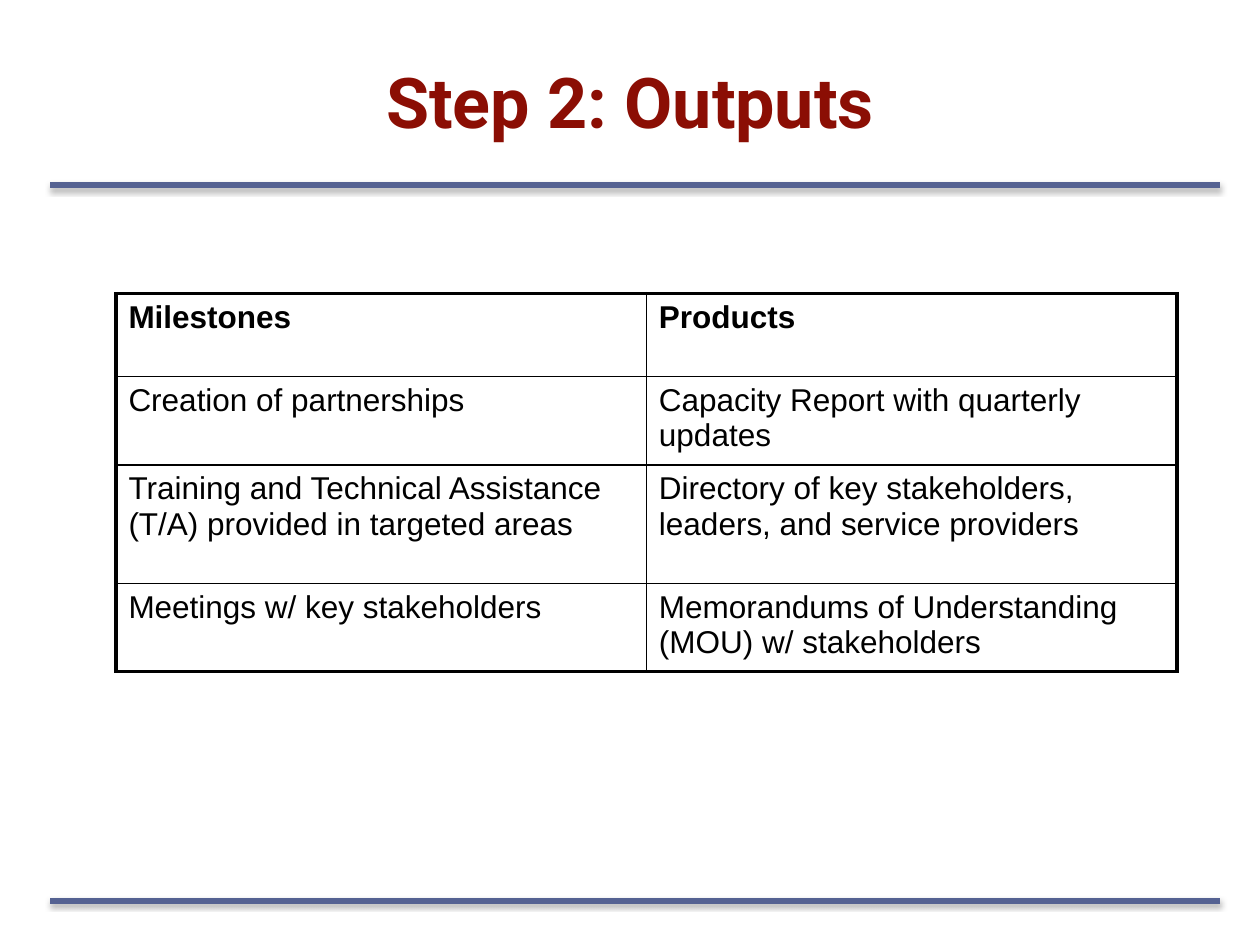
from lxml import etree
from pptx import Presentation, util as u
from pptx.dml.color import RGBColor
from pptx.enum import shapes, text
from pptx.oxml import ns

COLORS = {"title": "8B0E04", "rule": "556292", "ink": "000000", "paper": "FFFFFF"}
ROWS = [
    ("Milestones", "Products"),
    ("Creation of partnerships", "Capacity Report with quarterly updates"),
    ("Training and Technical Assistance (T/A) provided in targeted areas",
     "Directory of key stakeholders, leaders, and service providers"),
    ("Meetings w/ key stakeholders",
     "Memorandums of Understanding (MOU) w/ stakeholders"),
]
ROW_HEIGHTS = [0.66, 0.68, 0.94, 0.68]


def rgb(name):
    return RGBColor.from_string(COLORS[name])


def add_element(parent, tag, **attributes):
    values = {key: str(value) for key, value in attributes.items()}
    return etree.SubElement(parent, ns.qn(tag), values)


def write(frame, content, *, font, size, color, bold=False, align=text.PP_ALIGN.LEFT):
    paragraph = frame.paragraphs[0]
    paragraph.alignment = align
    run = paragraph.add_run()
    run.text = content
    run.font.name = font
    run.font.size = u.Pt(size)
    run.font.bold = bold
    run.font.color.rgb = rgb(color)


class SlideBuilder:
    outer_width = 2.25
    inner_width = 1

    def __init__(self, slide):
        self.slide = slide

    def title(self, content, left, top, width, height):
        box = self.slide.shapes.add_textbox(
            u.Inches(left), u.Inches(top), u.Inches(width), u.Inches(height))
        frame = box.text_frame
        frame.word_wrap = True
        frame.vertical_anchor = text.MSO_ANCHOR.MIDDLE
        write(frame, content, font="Roboto", size=40, color="title", bold=True,
              align=text.PP_ALIGN.CENTER)

    def rule(self, left, right, y):
        line = self.slide.shapes.add_connector(
            shapes.MSO_CONNECTOR.STRAIGHT,
            u.Inches(left), u.Inches(y), u.Inches(right), u.Inches(y))
        line.line.color.rgb = rgb("rule")
        line.line.width = u.Pt(3.25)
        # Soft shadow straight below the rule
        effects = add_element(line._element.spPr, "a:effectLst")
        shadow = add_element(effects, "a:outerShdw", blurRad=u.Pt(3.1),
                             dist=u.Pt(1.6), dir=90 * 60000, rotWithShape=0)
        color = add_element(shadow, "a:srgbClr", val=COLORS["ink"])
        add_element(color, "a:alpha", val=38000)

    def borders(self, cell, outer_sides):
        properties = cell._tc.get_or_add_tcPr()
        for position, side in enumerate("LRTB"):
            width = self.outer_width if side in outer_sides else self.inner_width
            line = etree.Element(ns.qn(f"a:ln{side}"), w=str(u.Pt(width)))
            fill = add_element(line, "a:solidFill")
            add_element(fill, "a:srgbClr", val=COLORS["ink"])
            properties.insert(position, line)

    def table(self, rows, heights, left, top, width):
        row_count, column_count = len(rows), len(rows[0])
        table = self.slide.shapes.add_table(
            row_count, column_count, u.Inches(left), u.Inches(top),
            u.Inches(width), u.Inches(sum(heights))).table
        for row, height in zip(table.rows, heights):
            row.height = u.Inches(height)
        for r, labels in enumerate(rows):
            for c, label in enumerate(labels):
                cell = table.cell(r, c)
                cell.fill.solid()
                cell.fill.fore_color.rgb = rgb("paper")
                write(cell.text_frame, label, font="Arial", size=18,
                      color="ink", bold=r == 0)
                edges = {"L": c == 0, "R": c == column_count - 1,
                         "T": r == 0, "B": r == row_count - 1}
                self.borders(cell, [side for side, outer in edges.items() if outer])


def main():
    presentation = Presentation()
    presentation.slide_width = u.Inches(10)
    presentation.slide_height = u.Inches(7.5)
    builder = SlideBuilder(presentation.slides.add_slide(presentation.slide_layouts[6]))

    # Rules above and below the content
    for y in (1.47, 7.15):
        builder.rule(0.4, 9.68, y)

    # Title and table of outputs
    builder.title("Step 2: Outputs", 0.5, 0.3, 9, 0.99)
    builder.table(ROWS, ROW_HEIGHTS, 0.92, 2.33, 8.42)

    presentation.save("out.pptx")


if __name__ == "__main__":
    main()
